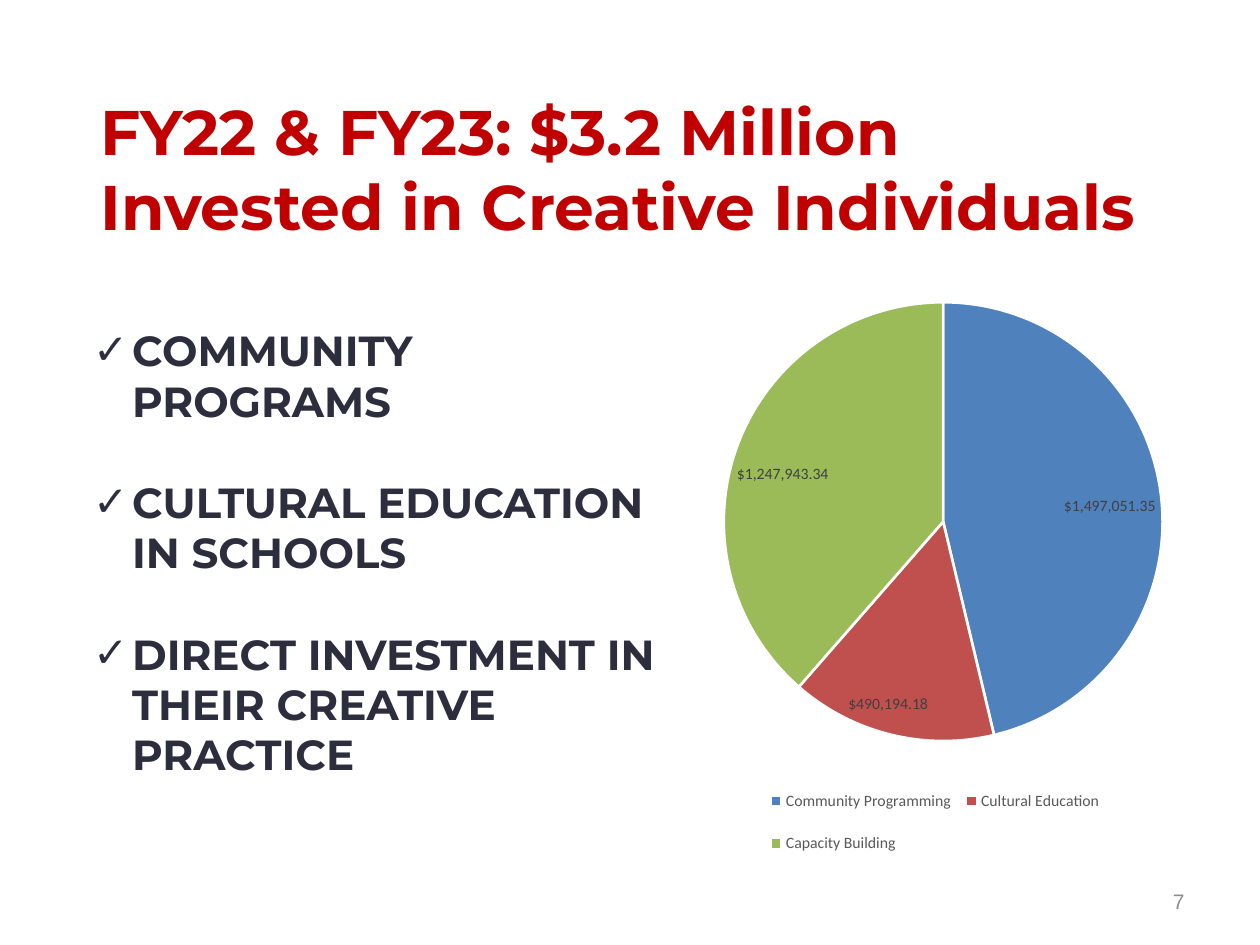
from lxml.etree import SubElement
from pptx import Presentation
from pptx.chart.data import CategoryChartData
from pptx.dml.color import RGBColor
from pptx.enum.chart import XL_CHART_TYPE as ChartType, XL_LABEL_POSITION as LabelPos, XL_LEGEND_POSITION as LegendPos
from pptx.enum.text import MSO_ANCHOR as Anchor, PP_ALIGN as Align
from pptx.oxml.ns import qn
from pptx.util import Inches, Pt

TITLE = "FY22 & FY23: $3.2 Million Invested in Creative Individuals"
PROGRAMS = [
    "COMMUNITY PROGRAMS",
    "CULTURAL EDUCATION IN SCHOOLS",
    "DIRECT INVESTMENT IN THEIR CREATIVE PRACTICE",
]
PAGE_NUMBER = "7"
INVESTMENTS = [
    ("Community Programming", 1497051.35, "4F81BD"),
    ("Cultural Education", 490194.18, "C0504D"),
    ("Capacity Building", 1247943.34, "9BBB59"),
]
PLOT_AREA = (0.124, 0.061, 0.808, 0.687)
LEGEND_AREA = (0.23, 0.79, 0.57, 0.17)


def color(value):
    return RGBColor.from_string(value)


def style(font, name, size, value, bold=False):
    font.name, font.size, font.bold = name, Pt(size), bold
    font.color.rgb = color(value)


def add_text(slide, box, lines, anchor=Anchor.TOP):
    frame = slide.shapes.add_textbox(*map(Inches, box)).text_frame
    frame.word_wrap = True
    frame.vertical_anchor = anchor
    frame.text = "\n".join(lines)
    return frame.paragraphs


def add_check(paragraph):
    properties = paragraph._p.get_or_add_pPr()
    properties.set("marL", str(Inches(0.31)))
    properties.set("indent", str(-Inches(0.31)))
    SubElement(properties, qn("a:buFont")).set("typeface", "Arial")
    SubElement(properties, qn("a:buChar")).set("char", "✓")


def place(part, area, inner=False):
    for old in part.findall(qn("c:layout")):
        part.remove(old)
    layout = part.makeelement(qn("c:layout"), {})
    manual = SubElement(layout, qn("c:manualLayout"))
    if inner:
        SubElement(manual, qn("c:layoutTarget")).set("val", "inner")
    for mode in ("xMode", "yMode"):
        SubElement(manual, qn(f"c:{mode}")).set("val", "edge")
    for side, share in zip("xywh", area):
        SubElement(manual, qn(f"c:{side}")).set("val", str(share))
    part.insert(0 if inner else 1, layout)


def add_pie(slide):
    data = CategoryChartData()
    data.categories = [name for name, _, _ in INVESTMENTS]
    data.add_series("Series 1", [amount for _, amount, _ in INVESTMENTS])
    box = map(Inches, (4.92, 2.09, 4.86, 5.07))
    chart = slide.shapes.add_chart(ChartType.PIE, *box, data).chart
    style(chart.font, "Calibri", 10, "000000")
    chart.has_title = False
    chart.has_legend = True
    chart.legend.position = LegendPos.BOTTOM
    chart.legend.include_in_layout = False
    style(chart.legend.font, "Calibri", 9, "595959")

    pie = chart.plots[0]
    pie.vary_by_categories = True
    for index, (_, _, fill) in enumerate(INVESTMENTS):
        wedge = pie.series[0].points[index].format
        wedge.fill.solid()
        wedge.fill.fore_color.rgb = color(fill)
        wedge.line.color.rgb = color("FFFFFF")
        wedge.line.width = Pt(1.5)
    labels = pie.series[0].data_labels
    labels.show_value = True
    labels.number_format = "$#,##0.00"
    labels.number_format_is_linked = False
    labels.position = LabelPos.BEST_FIT
    style(labels.font, "Calibri", 9, "404040")

    place(chart._chartSpace.find(".//" + qn("c:plotArea")), PLOT_AREA, inner=True)
    place(chart._chartSpace.find(".//" + qn("c:legend")), LEGEND_AREA)


def main():
    deck = Presentation()
    deck.slide_width, deck.slide_height = Inches(10), Inches(7.5)
    slide = deck.slides.add_slide(deck.slide_layouts[6])

    title = add_text(slide, (0.7, 0.37, 8.59, 1.92), [TITLE], Anchor.MIDDLE)[0]
    style(title.runs[0].font, "Montserrat", 36, "C00000", True)

    number = add_text(slide, (7.17, 6.95, 2.33, 0.4), [PAGE_NUMBER], Anchor.MIDDLE)[0]
    number.alignment = Align.RIGHT
    style(number.runs[0].font, "Arial", 12, "8C8C8C")

    programs = add_text(slide, (0.64, 2.53, 4.86, 3.73), PROGRAMS)
    for index, program in enumerate(programs):
        if index:
            program.space_before = Pt(29)
        add_check(program)
        style(program.runs[0].font, "Montserrat", 24, "2C2E3D", True)

    add_pie(slide)
    deck.save("out.pptx")


if __name__ == "__main__":
    main()
